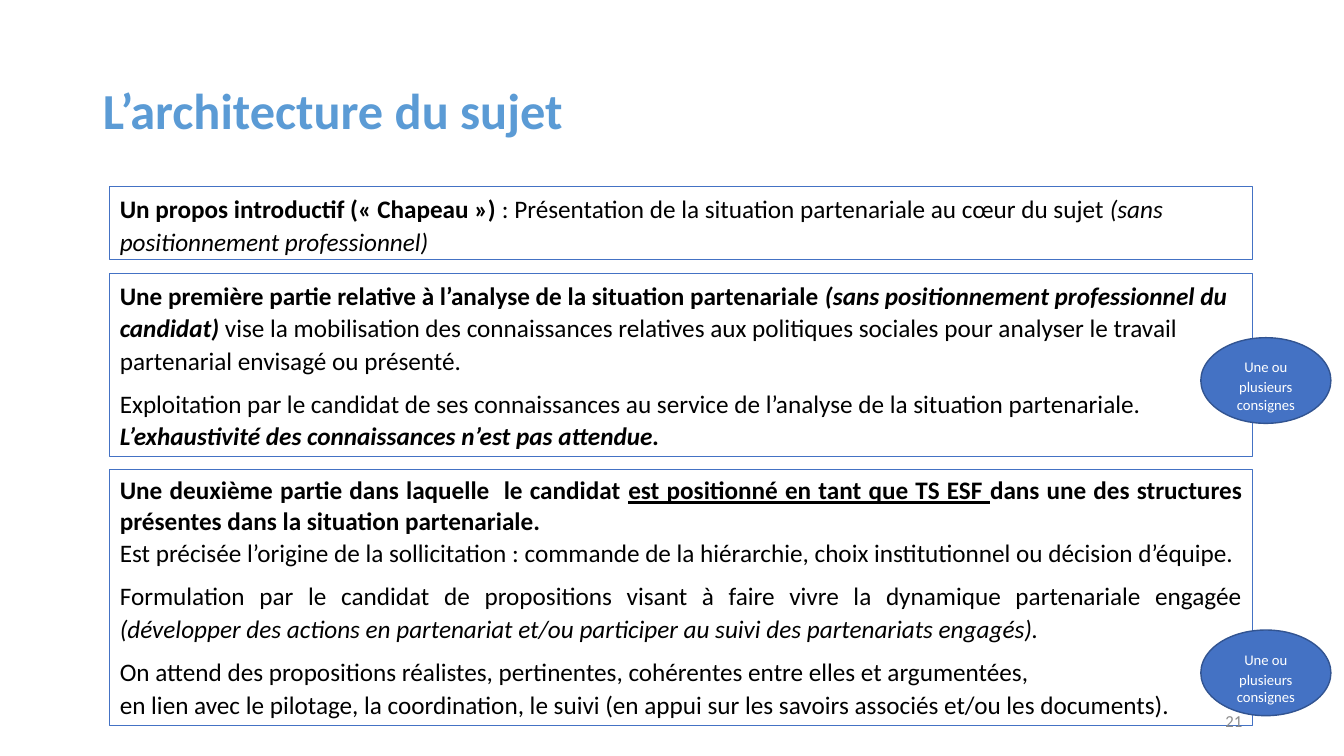
import pptx
import pptx.dml.color
import pptx.enum.shapes
import pptx.enum.text
import pptx.util

PX = 9144  # EMU per px, 100 px to the inch
FONT = "Calibri"
TITLE_BLUE = pptx.dml.color.RGBColor(0x5B, 0x9B, 0xD5)
BLUE = pptx.dml.color.RGBColor(0x44, 0x72, 0xC4)
DARK_BLUE = pptx.dml.color.RGBColor(0x32, 0x54, 0x91)
GREY = pptx.dml.color.RGBColor(0x8C, 0x8C, 0x8C)
BLACK = pptx.dml.color.RGBColor(0, 0, 0)
WHITE = pptx.dml.color.RGBColor(0xFF, 0xFF, 0xFF)

ALIGN = pptx.enum.text.PP_ALIGN
ANCHOR = pptx.enum.text.MSO_ANCHOR
FIT = pptx.enum.text.MSO_AUTO_SIZE
SHAPE = pptx.enum.shapes.MSO_SHAPE

# Each part: top, height, paragraphs; a paragraph: alignment, spaced, runs;
# a run: text, style letters (b bold, i italic, u underlined)
PARTS = [
    (185, 73, [
        (ALIGN.LEFT, True, [
            ("Un propos introductif (« Chapeau »)", "b"),
            (" : Présentation de la situation partenariale au cœur du sujet", ""),
            (" (sans positionnement professionnel)", "i")]),
    ]),
    (271, 182, [
        (ALIGN.LEFT, True, [
            ("Une première partie relative à l’analyse de la situation partenariale", "b"),
            (" (sans positionnement professionnel du candidat) ", "bi"),
            ("vise la mobilisation des connaissances relatives aux politiques sociales "
             "pour analyser le travail partenarial envisagé ou présenté.", "")]),
        (ALIGN.LEFT, True, [
            ("Exploitation par le candidat de ses connaissances au service de "
             "l’analyse de la situation partenariale. ", ""),
            ("L’exhaustivité des connaissances n’est pas attendue.", "bi")]),
    ]),
    (466, 254, [
        (ALIGN.JUSTIFY, False, [
            ("Une deuxième partie dans laquelle  le candidat ", "b"),
            ("est positionné en tant que TS ESF ", "bu"),
            ("dans une des structures présentes dans la situation partenariale. ", "b")]),
        (ALIGN.JUSTIFY, True, [
            ("Est précisée l’origine de la sollicitation : commande de la hiérarchie, "
             "choix institutionnel ou décision d’équipe.", "")]),
        (ALIGN.JUSTIFY, True, [
            ("Formulation par le candidat de propositions visant à faire vivre la "
             "dynamique partenariale engagée ", ""),
            ("(développer des actions en partenariat et/ou participer au suivi des "
             "partenariats engagés). ", "i")]),
        (ALIGN.LEFT, True, [
            ("On attend des propositions réalistes, pertinentes, cohérentes entre elles "
             "et argumentées, \nen lien avec le pilotage, la coordination, le suivi "
             "(en appui sur les savoirs associés et/ou les documents).", "")]),
    ]),
]
BADGE_TOPS = [335, 625]


def px(*lengths):
    return [pptx.util.Emu(length * PX) for length in lengths]


def write(paragraph, text, size=18, color=BLACK, style=""):
    for index, line in enumerate(text.split("\n")):
        if index:
            paragraph.add_line_break()
        run = paragraph.add_run()
        run.text = line
        run.font.name = FONT
        run.font.size = pptx.util.Pt(size)
        run.font.color.rgb = color
        run.font.bold = "b" in style
        run.font.italic = "i" in style
        run.font.underline = "u" in style


def add_title(slide, text):
    title = slide.shapes.title
    title.left, title.top, title.width, title.height = px(92, 40, 1150, 145)
    frame = title.text_frame
    frame.auto_size = FIT.NONE
    frame.vertical_anchor = ANCHOR.MIDDLE
    paragraph = frame.paragraphs[0]
    paragraph.alignment = ALIGN.LEFT
    paragraph.line_spacing = 0.9
    write(paragraph, text, size=36, color=TITLE_BLUE, style="b")


def add_outlined(slide, kind, place, line_color, line_width):
    shape = slide.shapes.add_shape(kind, *px(*place))
    shape.shadow.inherit = False
    shape.line.color.rgb = line_color
    shape.line.width = pptx.util.Pt(line_width)
    shape.text_frame.word_wrap = True
    return shape


def add_part(slide, top, height, paragraphs):
    box = add_outlined(slide, SHAPE.RECTANGLE, (109, top, 1133, height), BLUE, 0.75)
    box.fill.background()
    frame = box.text_frame
    frame.vertical_anchor = ANCHOR.TOP
    frame.auto_size = FIT.SHAPE_TO_FIT_TEXT
    for index, (alignment, spaced, runs) in enumerate(paragraphs):
        paragraph = frame.add_paragraph() if index else frame.paragraphs[0]
        paragraph.alignment = alignment
        if spaced:
            paragraph.line_spacing = 1.07
            paragraph.space_after = pptx.util.Pt(8)
        for text, style in runs:
            write(paragraph, text, style=style)


def add_badge(slide, top):
    badge = add_outlined(slide, SHAPE.OVAL, (1191, top, 129, 85), DARK_BLUE, 1)
    badge.fill.solid()
    badge.fill.fore_color.rgb = BLUE
    badge.text_frame.vertical_anchor = ANCHOR.MIDDLE
    paragraph = badge.text_frame.paragraphs[0]
    paragraph.alignment = ALIGN.CENTER
    for text, size in [("Une ou", 10.5), (" ", 18), ("plusieurs consignes", 10.5)]:
        write(paragraph, text, size=size, color=WHITE)


def add_page_number(slide, number):
    frame = slide.shapes.add_textbox(*px(942, 695, 300, 40)).text_frame
    frame.word_wrap = True
    frame.vertical_anchor = ANCHOR.MIDDLE
    paragraph = frame.paragraphs[0]
    paragraph.alignment = ALIGN.RIGHT
    write(paragraph, number, size=12, color=GREY)


def main():
    deck = pptx.Presentation()
    deck.slide_width, deck.slide_height = px(1333, 750)
    slide = deck.slides.add_slide(deck.slide_layouts[5])

    add_title(slide, "L’architecture du sujet")
    # The three parts of the subject
    for part in PARTS:
        add_part(slide, *part)
    # Reminders beside the two working parts
    for top in BADGE_TOPS:
        add_badge(slide, top)
    add_page_number(slide, "21")

    deck.save("out.pptx")


if __name__ == "__main__":
    main()
